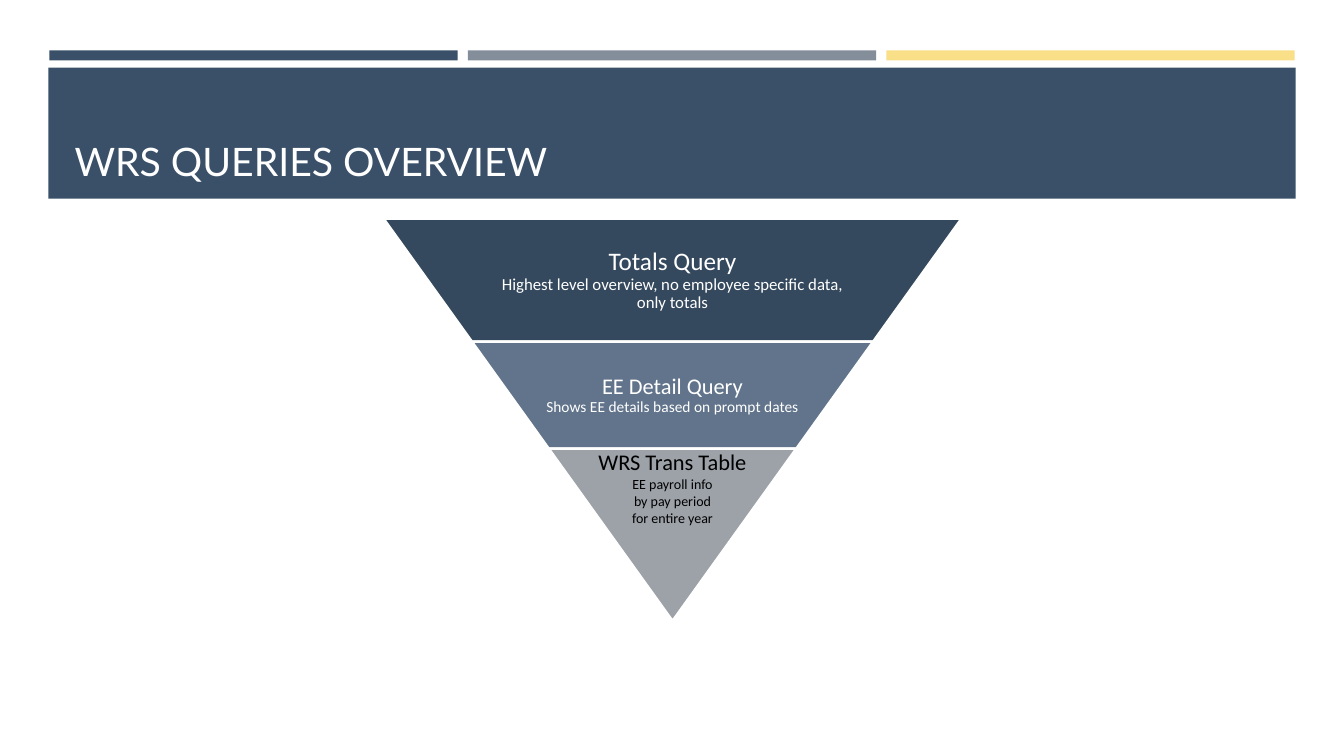
import pptx
import pptx.util
import pptx.dml.color
import pptx.enum.shapes
import pptx.enum.text

Inches, Pt = pptx.util.Inches, pptx.util.Pt
RGB = pptx.dml.color.RGBColor.from_string
SHAPES = pptx.enum.shapes.MSO_SHAPE
ANCHOR = pptx.enum.text.MSO_ANCHOR
ALIGN = pptx.enum.text.PP_ALIGN

COLORS = {
    "navy": "3A5068", "gray": "848D9A", "yellow": "F8DF88",
    "totals": "35495E", "detail": "61748B", "trans": "9DA2A9",
    "white": "FFFFFF", "black": "000000",
}

prs = pptx.Presentation()
prs.slide_width, prs.slide_height = Inches(13.33), Inches(7.5)
slide = prs.slides.add_slide(prs.slide_layouts[5])


def add_filled(kind, left, top, width, height, color):
    shape = slide.shapes.add_shape(
        kind, Inches(left), Inches(top), Inches(width), Inches(height))
    shape.shadow.inherit = False
    shape.fill.solid()
    shape.fill.fore_color.rgb = RGB(COLORS[color])
    shape.line.fill.background()
    return shape


# Header: three accent strips above the title band
for column, color in enumerate(["navy", "gray", "yellow"]):
    add_filled(SHAPES.RECTANGLE, 0.49 + column * 4.15, 0.5, 4.05, 0.1, color)
add_filled(SHAPES.RECTANGLE, 0.48, 0.67, 12.37, 1.3, "navy")

title = slide.shapes.title
slide.shapes._spTree.append(title._element)  # bring in front of the band
title.left, title.top = Inches(0.64), Inches(0.77)
title.width, title.height = Inches(12.06), Inches(1.11)
title.text_frame.text = "WRS QUERIES OVERVIEW"
title.text_frame.vertical_anchor = ANCHOR.BOTTOM
heading = title.text_frame.paragraphs[0]
heading.alignment = ALIGN.LEFT
heading.font.name, heading.font.size = "Lato", Pt(28)
heading.font.color.rgb = RGB(COLORS["white"])

# Inverted pyramid: each level starts where the one above ends
SLOPE = 0.718  # side inset per unit of height
CENTER = 6.67
# height, text width, fill, text color, inset, anchor, line spacing, sizes, lines
levels = [
    (1.22, 3.73, "totals", "white", 0.03, ANCHOR.MIDDLE, 0.9, (18, 12),
     ["Totals Query",
      "Highest level overview, no employee specific data, only totals"]),
    (1.06, 2.58, "detail", "white", 0.02, ANCHOR.MIDDLE, 0.9, (16, 11),
     ["EE Detail Query", "Shows EE details based on prompt dates"]),
    (1.71, 2.44, "trans", "black", 0, ANCHOR.TOP, 1.0, (16, 10),
     ["WRS Trans Table", "EE payroll info", "by pay period", "for entire year"]),
]
top, width = 2.17, 5.73
for (height, text_width, fill, text_color, inset, anchor, spacing,
     (name_size, detail_size), lines) in levels:
    level = add_filled(SHAPES.TRAPEZOID, CENTER - width / 2, top,
                       width, height, fill)
    level.rotation = 180
    level.adjustments[0] = SLOPE
    level.line.color.rgb = RGB(COLORS["white"])
    level.line.width = Pt(1.75)

    label = slide.shapes.add_textbox(
        Inches(CENTER - text_width / 2), Inches(top),
        Inches(text_width), Inches(height))
    frame = label.text_frame
    frame.word_wrap = True
    frame.vertical_anchor = anchor
    frame.margin_left = frame.margin_right = Inches(inset)
    frame.margin_top = frame.margin_bottom = Inches(inset)
    frame.text = "\n".join(lines)
    for row, paragraph in enumerate(frame.paragraphs):
        paragraph.alignment = ALIGN.CENTER
        paragraph.line_spacing = spacing
        paragraph.font.name = "Calibri"
        paragraph.font.size = Pt(detail_size if row else name_size)
        paragraph.font.color.rgb = RGB(COLORS[text_color])

    top += height
    width -= 2 * SLOPE * height

prs.save("out.pptx")
